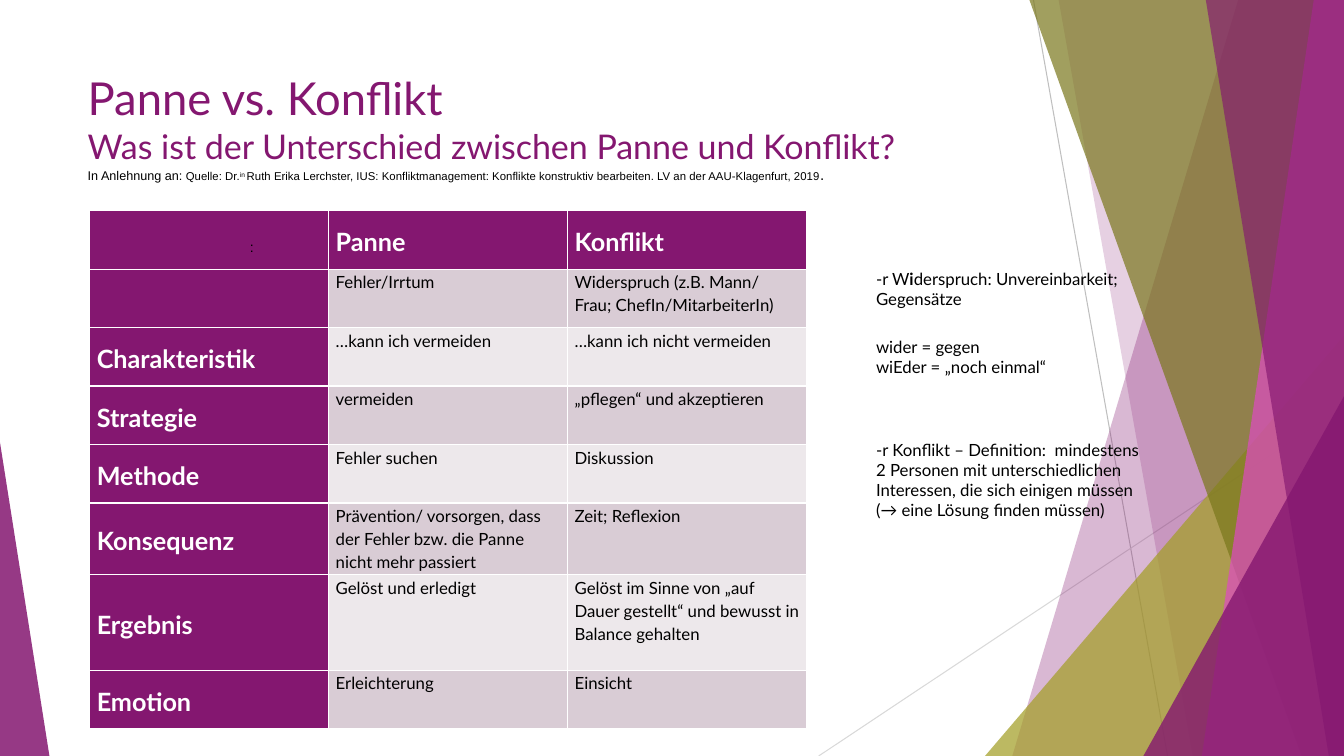
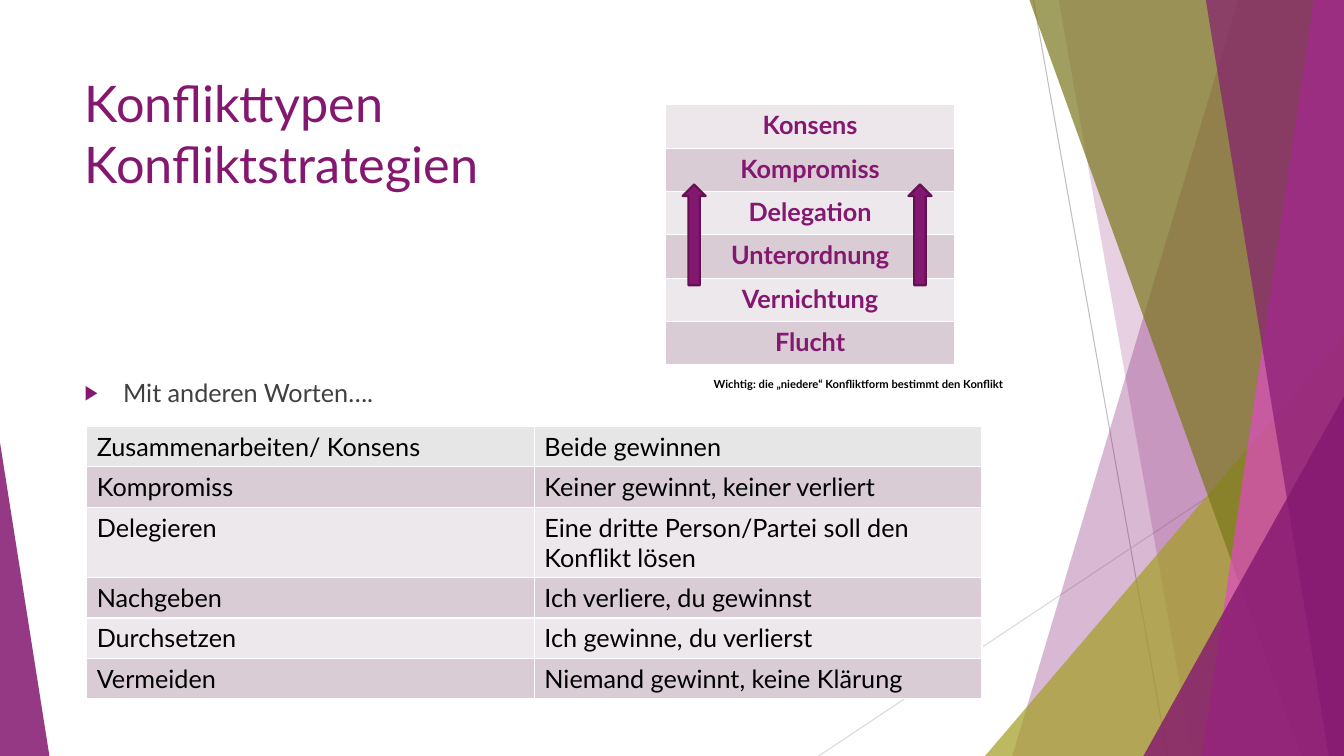
from lxml.etree import SubElement
from pptx import Presentation
from pptx.dml.color import RGBColor
from pptx.enum.shapes import MSO_CONNECTOR, MSO_SHAPE
from pptx.enum.text import MSO_ANCHOR, MSO_AUTO_SIZE, PP_ALIGN
from pptx.oxml.ns import qn
from pptx.util import Inches, Pt

rgb = RGBColor.from_string
PURPLE, OLIVE, DARK_OLIVE, PINK = "841770", "A39E26", "7A771C", "DF4AC4"
BLACK, WHITE, GREY = "000000", "FFFFFF", "404040"
BANDS = ["EDE8EB", "D9CCD5"]
FONT = "Lato"
WIDTH, HEIGHT = 13.33, 7.5


def add_run(p, text, color=BLACK, size=12, **fmt):
    r = p.add_run()
    r.text = text
    r.font.color.rgb = rgb(color)
    for name, value in {"name": FONT, "size": Pt(size), "bold": False, **fmt}.items():
        setattr(r.font, name, value)
    return r


def add_grid(s, at, widths, heights, rows, head_fill, head, body=None,
             lead_column=False, cell_fmt=None, p_fmt=None):
    """Add a banded table; head and body are run formats for the two kinds of cell."""
    box = map(Inches, (*at, sum(widths), sum(heights)))
    table = s.shapes.add_table(len(rows), len(widths), *box).table
    for column, width in zip(table.columns, widths):
        column.width = Inches(width)
    for i, (row, height, texts) in enumerate(zip(table.rows, heights, rows)):
        row.height = Inches(height)
        for j, (cell, text) in enumerate(zip(row.cells, texts)):
            is_head = i == 0 or (lead_column and j == 0)
            cell.fill.solid()
            cell.fill.fore_color.rgb = rgb(head_fill if is_head else BANDS[i % 2])
            for name, value in (cell_fmt or {}).items():
                setattr(cell, name, value)
            if is_head and lead_column:
                cell.vertical_anchor = MSO_ANCHOR.MIDDLE
            p = cell.text_frame.paragraphs[0]
            for name, value in (p_fmt or {}).items():
                setattr(p, name, value)
            if text:
                add_run(p, text, **(head if is_head else body or head))


prs = Presentation()
prs.slide_width, prs.slide_height = Inches(WIDTH), Inches(HEIGHT)
master = prs.slide_master

# Shared title style
title = master.placeholders[0]
title.left, title.top, title.width, title.height = map(Inches, (0.74, 0.67, 9.4, 1.44))
title.text_frame.vertical_anchor = MSO_ANCHOR.TOP
title.text_frame.auto_size = MSO_AUTO_SIZE.NONE
level = master.element.find(f".//{qn('p:titleStyle')}/{qn('a:lvl1pPr')}")
level.set("algn", "l")
font = level.find(qn("a:defRPr"))
font.set("sz", "3600")
font.find(qn("a:latin")).set("typeface", FONT)
fill = font.find(qn("a:solidFill"))
fill.clear()
SubElement(fill, qn("a:srgbClr"), val=PURPLE)

# Shared backdrop: drawn as one group, then moved behind everything on the master
s = prs.slides.add_slide(prs.slide_layouts[5])
backdrop = s.shapes.add_group_shape()
for start, end, color in [((10.25, 0), (11.58, HEIGHT), "BFBFBF"),
                          ((WIDTH, 4.03), (8.12, HEIGHT), "D9D9D9")]:
    line = backdrop.shapes.add_connector(MSO_CONNECTOR.STRAIGHT, *map(Inches, start + end))
    line.line.color.rgb = rgb(color)
    line.line.width = Pt(0.75)
    SubElement(line._element.spPr, qn("a:effectLst"))

# A band runs to the right edge from (top x, bottom x);
# a triangle stands on the bottom edge: (left, top, width, apex)
facets = [
    ((12.28, 10.04), PURPLE, 30),
    ((10.5, 11.83), PURPLE, 20),
    ((9.77, 3.33, 3.56, 1), OLIVE, 72),
    ((10.21, 12.91), DARK_OLIVE, 70),
    ((13.03, 11.92), PINK, 70),
    ((11.96, 13.18), PURPLE, 65),
    ((11.34, 3.93, 1.99, 1), PURPLE, 80),
    ((0, 4.39, 0.49, 0), PURPLE, 85),
]
for place, color, opacity in facets:
    if len(place) == 2:
        top_x, bottom_x = map(Inches, place)
        right, bottom = Inches(WIDTH), Inches(HEIGHT)
        outline = backdrop.shapes.build_freeform(top_x, 0)
        outline.add_line_segments([(right, 0), (right, bottom), (bottom_x, bottom)])
        sp = outline.convert_to_shape()
    else:
        left, top, width, apex = place
        sp = backdrop.shapes.add_shape(MSO_SHAPE.ISOSCELES_TRIANGLE,
                                       *map(Inches, (left, top, width, HEIGHT - top)))
        sp.adjustments[0] = apex
    sp.shadow.inherit = False
    sp.fill.solid()
    sp.fill.fore_color.rgb = rgb(color)
    SubElement(sp._element.spPr.find(f".//{qn('a:srgbClr')}"), qn("a:alpha"),
               val=str(opacity * 1000))
    sp.line.fill.background()
for number, props in enumerate(backdrop._element.xpath(".//p:cNvPr"), 20):
    props.set("id", str(number))
master.shapes.element.insert(2, backdrop._element)

# Slide 1: breakdown versus conflict
title = s.shapes.title
title.left, title.top, title.width, title.height = map(Inches, (0.77, 0.65, 9.4, 1.44))
p = title.text_frame.paragraphs[0]
add_run(p, "Panne vs. Konflikt", PURPLE, 32.4)
p.add_line_break()
add_run(p, "Was ist der Unterschied zwischen Panne und Konflikt?", PURPLE, 24.3)
p.add_line_break()
for text, size, baseline in [
    ("In Anlehnung an: ", 9, 0),
    ("Quelle: Dr.", 8.1, 0),
    ("in ", 8.1, 30),
    ("Ruth Erika Lerchster, IUS: Konfliktmanagement: Konflikte konstruktiv bearbeiten. "
     "LV an der AAU-Klagenfurt, 2019", 8.1, 0),
    (".", 10.8, 0),
]:
    r = add_run(p, text, size=size, name="Arial")
    if baseline:
        r.font._element.set("baseline", str(baseline * 1000))

comparison = [
    ("", "Panne", "Konflikt"),
    ("", "Fehler/Irrtum", "Widerspruch (z.B. Mann/ Frau; ChefIn/MitarbeiterIn)"),
    ("Charakteristik", "…kann ich vermeiden", "…kann ich nicht vermeiden"),
    ("Strategie", "vermeiden", "„pflegen“ und akzeptieren"),
    ("Methode", "Fehler suchen", "Diskussion"),
    ("Konsequenz", "Prävention/ vorsorgen, dass der Fehler bzw. die Panne nicht mehr passiert",
     "Zeit; Reflexion"),
    ("Ergebnis", "Gelöst und erledigt",
     "Gelöst im Sinne von „auf Dauer gestellt“ und bewusst in Balance gehalten"),
    ("Emotion", "Erleichterung", "Einsicht"),
]
add_grid(s, (0.89, 2.09), [2.37] * 3, [0.58] * 5 + [0.71, 0.95, 0.58], comparison, PURPLE,
         head={"color": WHITE, "size": 18, "bold": True}, body={"size": 12}, lead_column=True,
         cell_fmt={"margin_left": Inches(0.07), "margin_right": Inches(0.07),
                   "margin_top": 0, "margin_bottom": 0},
         p_fmt={"line_spacing": 1.15})

colon = s.shapes.add_textbox(*map(Inches, (2.38, 2.3, 0.24, 0.3)))
colon.text_frame.word_wrap = False
colon.text_frame.vertical_anchor = MSO_ANCHOR.MIDDLE
add_run(colon.text_frame.paragraphs[0], ":", size=10, name="Arial")

notes = [
    (2.62, 2.75, 0.5, [[("-r W", False), ("i", True),
                        ("derspruch: Unvereinbarkeit; Gegensätze", False)]]),
    (3.29, 2.15, 0.5, [[("wider = gegen", False)], [("wiEder = „noch einmal“", False)]]),
    (4.31, 2.88, 0.91, [[("-r Konflikt – Definition:  mindestens 2 Personen mit "
                          "unterschiedlichen Interessen, die sich einigen müssen "
                          "(→ eine Lösung finden müssen)", False)]]),
]
for top, width, height, paragraphs in notes:
    tf = s.shapes.add_textbox(*map(Inches, (8.59, top, width, height))).text_frame
    tf.word_wrap = True
    for i, runs in enumerate(paragraphs):
        p = tf.add_paragraph() if i else tf.paragraphs[0]
        for text, bold in runs:
            add_run(p, text, bold=bold)

# Slide 2: conflict strategies
s = prs.slides.add_slide(prs.slide_layouts[1])
s.shapes.title.text_frame.paragraphs[0].text = "Konflikttypen\vKonfliktstrategien"

body = s.placeholders[1]
body.left, body.top, body.width, body.height = map(Inches, (0.74, 3.69, 5.5, 0.45))
p = body.text_frame.paragraphs[0]
p.space_before = Pt(0)
add_run(p, "Mit anderen Worten….", GREY, 18)
pPr = p._p.get_or_add_pPr()
pPr.set("marL", str(Inches(0.38)))
pPr.set("indent", str(-Inches(0.38)))
SubElement(SubElement(pPr, qn("a:buClr")), qn("a:srgbClr"), val=PURPLE)
SubElement(pPr, qn("a:buSzPct"), val="80000")
SubElement(pPr, qn("a:buChar"), char="▶")

strategies = [
    ("Zusammenarbeiten/ Konsens", "Beide gewinnen"),
    ("Kompromiss", "Keiner gewinnt, keiner verliert"),
    ("Delegieren", "Eine dritte Person/Partei soll den Konflikt lösen"),
    ("Nachgeben", "Ich verliere, du gewinnst"),
    ("Durchsetzen", "Ich gewinne, du verlierst"),
    ("Vermeiden", "Niemand gewinnt, keine Klärung"),
]
add_grid(s, (0.86, 4.23), [4.44] * 2, [0.4, 0.4, 0.7, 0.4, 0.4, 0.4], strategies, "E7E6E6",
         head={"size": 18})

tf = s.shapes.add_textbox(*map(Inches, (6.98, 3.69, 3.3, 0.24))).text_frame
tf.word_wrap = True
add_run(tf.paragraphs[0], "Wichtig: die „niedere“ Konfliktform bestimmt den Konflikt",
        size=8, bold=True)

steps = ["Konsens", "Kompromiss", "Delegation", "Unterordnung", "Vernichtung", "Flucht"]
add_grid(s, (6.6, 1.04), [2.87], [0.43] * len(steps), [(step,) for step in steps], "EDE7EB",
         head={"color": PURPLE, "size": 18, "bold": True},
         p_fmt={"alignment": PP_ALIGN.CENTER})

for left in (6.77, 9.01):
    arrow = s.shapes.add_shape(MSO_SHAPE.UP_ARROW, *map(Inches, (left, 1.83, 0.23, 1)))
    arrow.shadow.inherit = False
    arrow.fill.solid()
    arrow.fill.fore_color.rgb = rgb(PURPLE)
    arrow.line.color.rgb = rgb("621153")
    arrow.line.width = Pt(1.5)

prs.save("out.pptx")
